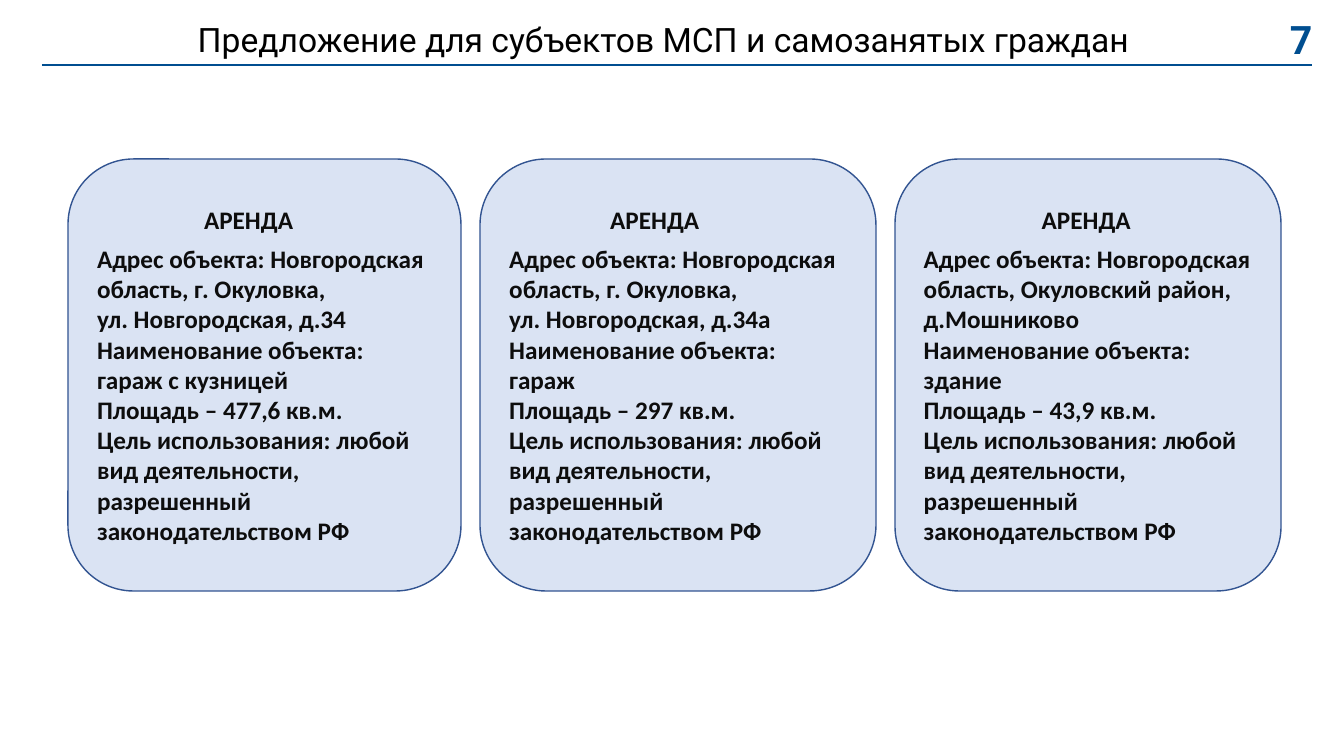
"""Slide with three lease offers for small businesses and the self-employed."""
from lxml import etree
from pptx import Presentation
from pptx.dml.color import RGBColor
from pptx.enum.shapes import MSO_CONNECTOR, MSO_SHAPE
from pptx.enum.text import MSO_ANCHOR, PP_ALIGN
from pptx.oxml.ns import qn
from pptx.util import Pt

PX = 914400 / 100.8
NAVY = "004E90"


def px(*lengths):
    return [round(length * PX) for length in lengths]


def style(font, name, size, color, bold):
    font.name, font.size, font.bold = name, Pt(size), bold
    font.color.rgb = RGBColor.from_string(color)


deck = Presentation()
deck.slide_width, deck.slide_height = px(1344, 756)
slide = deck.slides.add_slide(deck.slide_layouts[6])

headers = [
    ("7", 1280, 32, 28, NAVY, True, PP_ALIGN.LEFT),
    ("Предложение для субъектов МСП и самозанятых граждан",
     31, 1265, 24, "000000", False, PP_ALIGN.CENTER),
]
for text, left, width, size, color, bold, align in headers:
    frame = slide.shapes.add_textbox(*px(left, 29, width, 25)).text_frame
    frame.word_wrap = True
    frame.vertical_anchor = MSO_ANCHOR.MIDDLE
    frame.text = text
    line = frame.paragraphs[0]
    line.alignment, line.line_spacing = align, 0.9
    style(line.runs[0].font, "Roboto", size, color, bold)

rule = slide.shapes.add_connector(MSO_CONNECTOR.STRAIGHT, *px(42, 65, 1312, 65))
rule.line.color.rgb = RGBColor.from_string(NAVY)
rule.line.width = Pt(1)
etree.SubElement(rule._element.spPr, qn("a:effectLst"))

offers = [
    (68, 393, 107, "г. Окуловка,", "ул. Новгородская, д.34", "гараж с кузницей", "477,6"),
    (480, 396, 101, "г. Окуловка,", "ул. Новгородская, д.34а", "гараж", "297"),
    (895, 386, 118, "Окуловский район, д.Мошниково", None, "здание", "43,9"),
]
for left, width, heading_indent, place, street, building, area in offers:
    card = slide.shapes.add_shape(MSO_SHAPE.ROUNDED_RECTANGLE, *px(left, 159, width, 432))
    card.shadow.inherit = False
    card.fill.solid()
    card.fill.fore_color.rgb = RGBColor.from_string("DAE3F3")
    card.line.color.rgb = RGBColor.from_string("325491")
    card.line.width = Pt(1)

    details = [
        "АРЕНДА",
        f"Адрес объекта: Новгородская область, {place}",
        street,
        f"Наименование объекта: {building}",
        f"Площадь – {area} кв.м.",
        "Цель использования: любой вид деятельности, разрешенный законодательством РФ",
    ]
    frame = card.text_frame
    frame.word_wrap = True
    frame.vertical_anchor = MSO_ANCHOR.MIDDLE
    frame.text = "\n".join(filter(None, details))
    for paragraph in frame.paragraphs:
        paragraph.alignment = PP_ALIGN.LEFT
        style(paragraph.runs[0].font, "Calibri", 18, "0D0D0D", True)
    heading = frame.paragraphs[0]
    heading.space_after = Pt(6)
    heading._p.get_or_add_pPr().set("marL", str(px(heading_indent)[0]))

deck.save("out.pptx")
